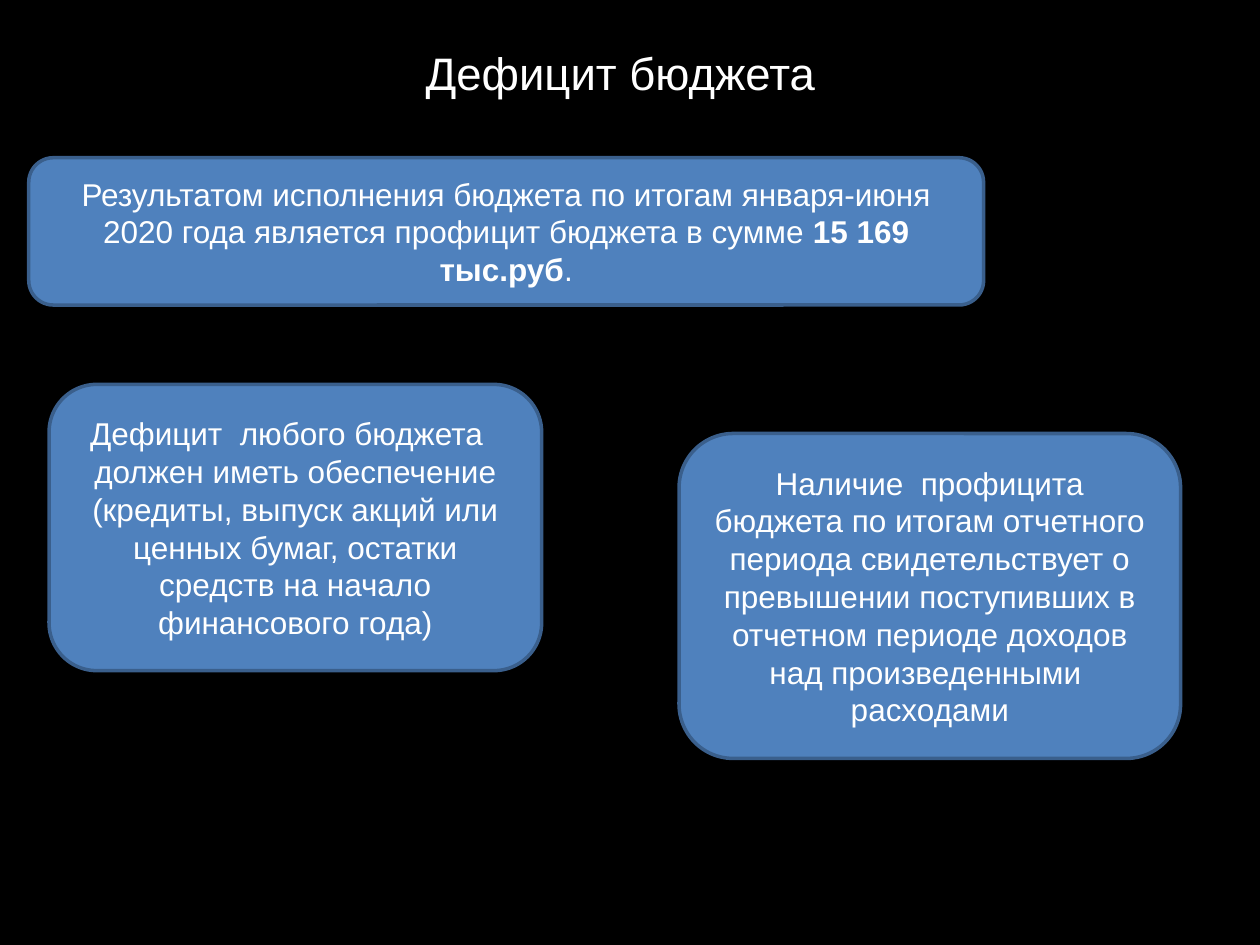
from pptx import Presentation
from pptx.dml.color import RGBColor
from pptx.enum.shapes import MSO_SHAPE
from pptx.enum.text import MSO_ANCHOR, MSO_AUTO_SIZE, PP_ALIGN
from pptx.util import Cm, Pt

BLACK, WHITE, BLUE, DARK_BLUE = "000000", "FFFFFF", "4F81BD", "3A5F8C"

# Boxes are (left, top, width, height) in cm; runs are (text, bold)
TITLE = ((8.33, 0.79, 9.93, 1.37), [("Дефицит бюджета", False)])
CARDS = [
    ((0.58, 3.18, 19.25, 2.97), [
        ("Результатом исполнения бюджета по итогам января-июня 2020 года "
         "является профицит бюджета в сумме ", False),
        ("15 169 тыс.руб", True),
        (".", False),
    ]),
    ((13.69, 8.74, 10.11, 6.55), [
        ("Наличие  профицита бюджета по итогам отчетного периода "
         "свидетельствует о превышении поступивших в отчетном периоде "
         "доходов над произведенными  расходами", False),
    ]),
    ((0.99, 7.75, 9.93, 5.77), [
        ("Дефицит  любого бюджета   должен иметь обеспечение (кредиты, "
         "выпуск акций или ценных бумаг, остатки средств на начало "
         "финансового года)", False),
    ]),
]


def color(value):
    return RGBColor.from_string(value)


def write(p, runs, size):
    for text, bold in runs:
        r = p.add_run()
        r.text = text
        font = {"name": "Arial", "size": Pt(size), "bold": bold}
        for name, value in font.items():
            setattr(r.font, name, value)
        r.font.color.rgb = color(WHITE)


def add_title(s, box, runs):
    tf = s.shapes.add_textbox(*map(Cm, box)).text_frame
    tf.word_wrap = False
    tf.auto_size = MSO_AUTO_SIZE.SHAPE_TO_FIT_TEXT
    write(tf.paragraphs[0], runs, 26)


def add_card(s, box, runs):
    sp = s.shapes.add_shape(MSO_SHAPE.ROUNDED_RECTANGLE, *map(Cm, box))
    sp.shadow.inherit = False
    sp.fill.solid()
    sp.fill.fore_color.rgb = color(BLUE)
    sp.line.color.rgb = color(DARK_BLUE)
    sp.line.width = Pt(2)
    tf = sp.text_frame
    tf.word_wrap = True
    tf.vertical_anchor = MSO_ANCHOR.MIDDLE
    p = tf.paragraphs[0]
    p.alignment = PP_ALIGN.CENTER
    write(p, runs, 18)


def main():
    prs = Presentation()
    prs.slide_width, prs.slide_height = Cm(25.4), Cm(19.05)
    s = prs.slides.add_slide(prs.slide_layouts[6])
    s.background.fill.solid()
    s.background.fill.fore_color.rgb = color(BLACK)
    add_title(s, *TITLE)
    for box, runs in CARDS:
        add_card(s, box, runs)
    prs.save("out.pptx")


if __name__ == "__main__":
    main()
